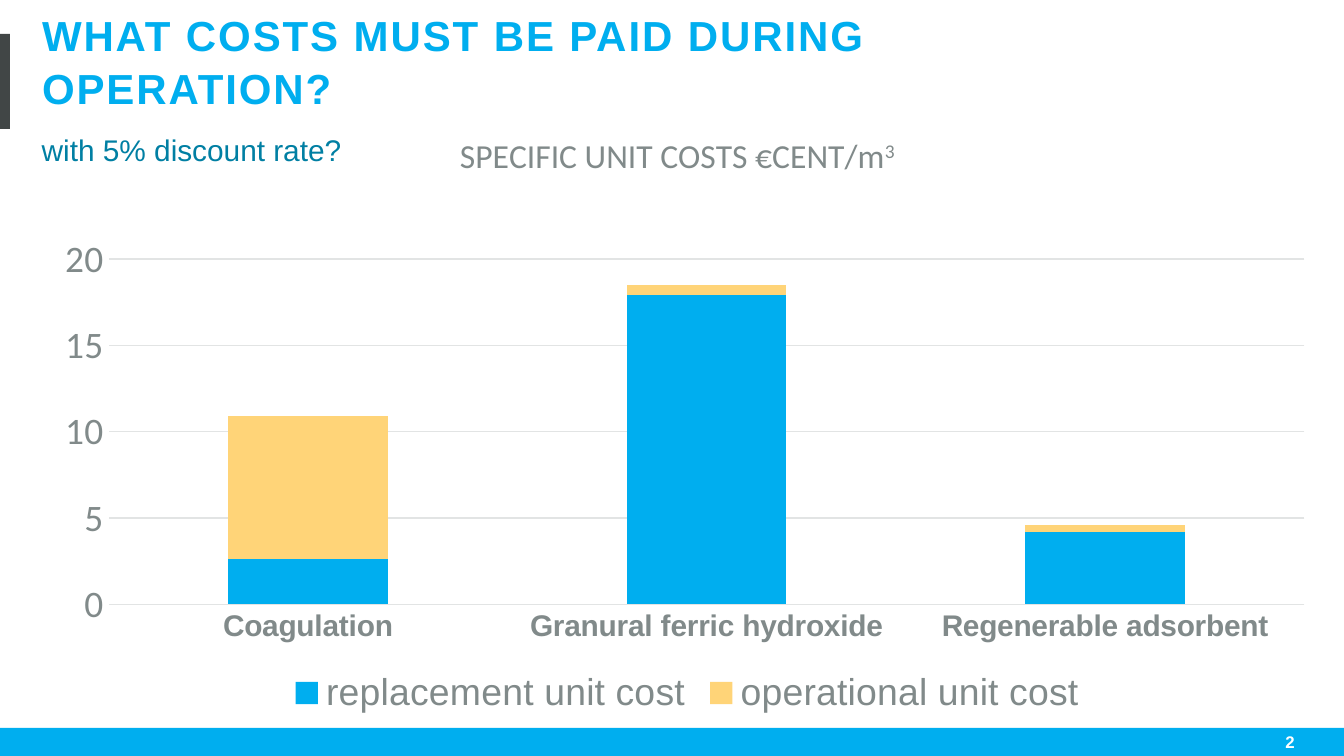
from pptx import Presentation
from pptx.chart.data import CategoryChartData
from pptx.dml.color import RGBColor
from pptx.enum.chart import XL_CHART_TYPE, XL_LEGEND_POSITION, XL_TICK_MARK
from pptx.enum.shapes import MSO_SHAPE
from pptx.enum.text import MSO_ANCHOR, MSO_AUTO_SIZE, PP_ALIGN
from pptx.oxml import parse_xml
from pptx.oxml.ns import nsdecls
from pptx.util import Cm, Pt

STACKED = XL_CHART_TYPE.COLUMN_STACKED
BOTTOM = XL_LEGEND_POSITION.BOTTOM
NO_TICK = XL_TICK_MARK.NONE
RECT = MSO_SHAPE.RECTANGLE
MIDDLE = MSO_ANCHOR.MIDDLE
NO_FIT = MSO_AUTO_SIZE.NONE
LEFT, RIGHT = PP_ALIGN.LEFT, PP_ALIGN.RIGHT

COLORS = {
    "blue": "00AEEF", "yellow": "FFD478", "teal": "007FA3", "dark": "414646",
    "gray": "818A8A", "grid": "E2E4E4", "white": "FFFFFF",
}


def rgb(name):
    return RGBColor.from_string(COLORS[name])


def set_font(font, color, **values):
    for key, value in values.items():
        setattr(font, key, value)
    font.color.rgb = rgb(color)


def manual_layout(x, y, w=None, h=None):
    """Layout element with positions as fractions of the chart."""
    parts = ['<c:layoutTarget val="inner"/>'] if w else []
    parts += ['<c:xMode val="edge"/>', '<c:yMode val="edge"/>']
    for tag, value in zip("xywh", (x, y, w, h)):
        if value is not None:
            parts.append(f'<c:{tag} val="{value}"/>')
    return parse_xml(f'<c:layout {nsdecls("c")}><c:manualLayout>'
                     f'{"".join(parts)}</c:manualLayout></c:layout>')


class SlideBuilder:
    def __init__(self, slide):
        self.slide = slide
        self.sans = "Arial"
        self.chart_font = "Calibri"

    def bar(self, box, color):
        sp = self.slide.shapes.add_shape(RECT, *map(Cm, box))
        sp.shadow.inherit = False
        sp.fill.solid()
        sp.fill.fore_color.rgb = rgb(color)
        sp.line.fill.background()

    def fill_text(self, sp, text, color, align=LEFT, **font):
        tf = sp.text_frame
        tf.word_wrap = True
        tf.auto_size = NO_FIT
        tf.vertical_anchor = MIDDLE
        p = tf.paragraphs[0]
        p.alignment = align
        r = p.add_run()
        r.text = text
        set_font(r.font, color, name=self.sans, **font)
        return p, r

    def text(self, box, text, color, **style):
        sp = self.slide.shapes.add_textbox(*map(Cm, box))
        self.fill_text(sp, text, color, **style)

    def title(self, box, text):
        sp = self.slide.shapes.title
        sp.left, sp.top, sp.width, sp.height = map(Cm, box)
        p, r = self.fill_text(sp, text, "blue", size=Pt(22.5), bold=True)
        p.line_spacing = 1.05
        r._r.get_or_add_rPr().set("spc", "100")

    def chart_title(self, chart, text, superscript):
        p = chart.chart_title.text_frame.paragraphs[0]
        for part in (text, superscript):
            r = p.add_run()
            r.text = part
            set_font(r.font, "gray", name=self.chart_font, size=Pt(18), bold=False)
        r._r.get_or_add_rPr().set("baseline", "30000")
        title = chart.chart_title._element
        layout = manual_layout(0.32, 0.04)
        for old in title.findall(layout.tag):
            title.remove(old)
        title.tx.addnext(layout)

    def chart(self, box, categories, series):
        data = CategoryChartData(number_format="0.0")
        data.categories = categories
        for name, values, _ in series:
            data.add_series(name, values)
        chart = self.slide.shapes.add_chart(STACKED, *map(Cm, box), data).chart
        set_font(chart.font, "dark", name=self.chart_font, size=Pt(10))

        # Columns
        plot = chart.plots[0]
        plot.gap_width, plot.overlap = 150, 100
        plot.vary_by_categories = False
        for ser, (_, _, color) in zip(plot.series, series):
            ser.format.fill.solid()
            ser.format.fill.fore_color.rgb = rgb(color)

        # Axes
        cat, val = chart.category_axis, chart.value_axis
        for axis in (cat, val):
            axis.major_tick_mark = axis.minor_tick_mark = NO_TICK
            axis.format.line.fill.background()
        set_font(cat.tick_labels.font, "gray", name=self.sans, size=Pt(16), bold=True)
        set_font(val.tick_labels.font, "gray", name=self.chart_font, size=Pt(20))
        val.minimum_scale, val.maximum_scale, val.major_unit = 0, 20, 5
        val.tick_labels.number_format = "0"
        val.tick_labels.number_format_is_linked = False
        val.has_major_gridlines = True
        grid = val.major_gridlines.format.line
        grid.color.rgb, grid.width = rgb("grid"), Pt(0.75)

        # Legend and plot position
        chart.has_legend = True
        chart.legend.position = BOTTOM
        chart.legend.include_in_layout = False
        set_font(chart.legend.font, "gray", name=self.sans, size=Pt(20))
        area = chart._chartSpace.chart.plotArea
        layout = manual_layout(0.05, 0.25, 0.93, 0.56)
        for old in area.findall(layout.tag):
            area.remove(old)
        area.insert(0, layout)
        return chart


def main():
    prs = Presentation()
    prs.slide_width, prs.slide_height = Cm(25.4), Cm(14.29)
    s = SlideBuilder(prs.slides.add_slide(prs.slide_layouts[5]))

    # Footer band, slide number and side accent
    s.bar((0, 13.76, 25.4, 0.53), "blue")
    s.text((18.52, 13.64, 6.2, 0.76), "2", "white", align=RIGHT, size=Pt(9), bold=True)
    s.bar((0, 0.64, 0.19, 1.8), "dark")

    # Title
    s.title((0.54, 0.28, 20.22, 1.7), "WHAT COSTS MUST BE PAID DURING OPERATION?")

    # Unit cost chart
    chart = s.chart(
        (0.84, 1.98, 24.3, 11.66),
        ("Coagulation", "Granural ferric hydroxide", "Regenerable adsorbent"),
        (("replacement unit cost", (2.6, 17.9, 4.2), "blue"),
         ("operational unit cost", (8.3, 0.6, 0.4), "yellow")))
    s.chart_title(chart, "SPECIFIC UNIT COSTS €CENT/m", "3")

    # Subtitle
    s.text((0.54, 2.36, 21.54, 0.94), "with 5% discount rate?", "teal", size=Pt(16))

    prs.save("out.pptx")


if __name__ == "__main__":
    main()
